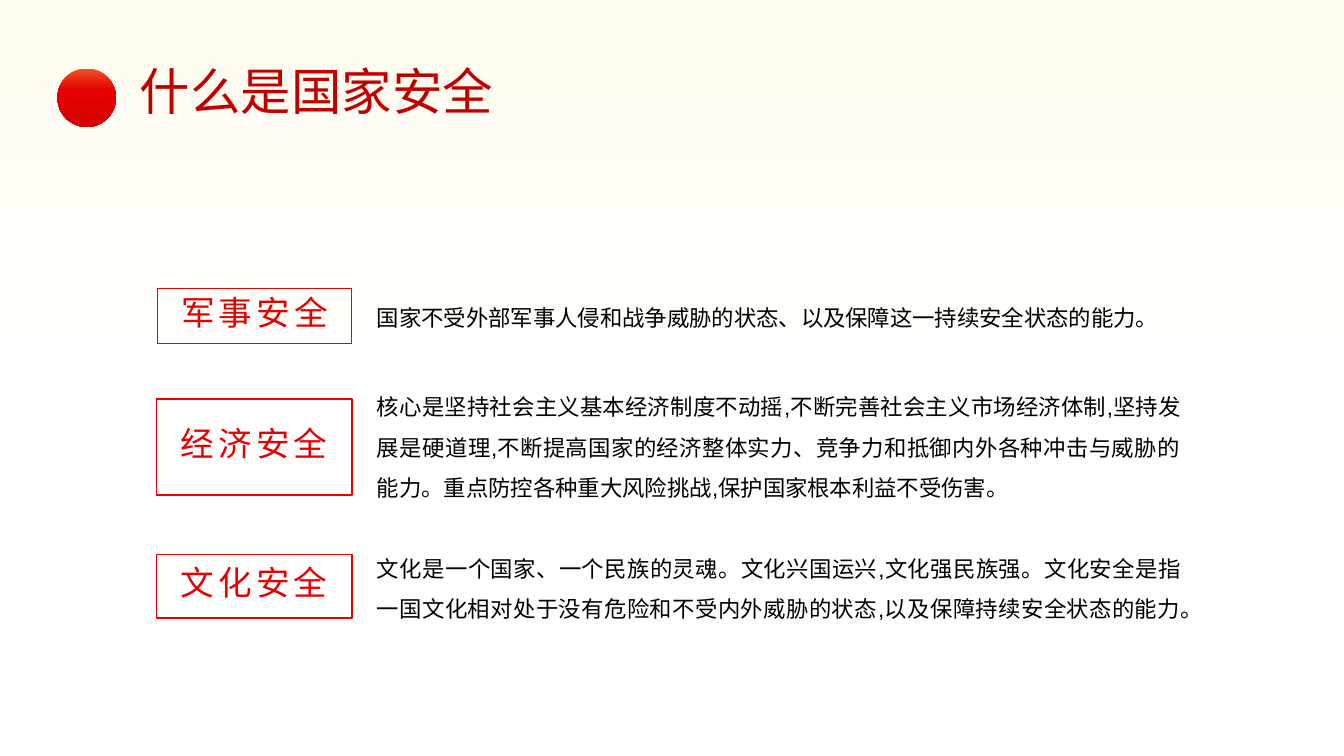
import pptx
import pptx.dml.color
import pptx.enum.shapes
import pptx.enum.text
import pptx.oxml
import pptx.oxml.ns
import pptx.util
from pptx.util import Inches

SHAPES = pptx.enum.shapes.MSO_SHAPE
ALIGN = pptx.enum.text.PP_ALIGN
ANCHOR = pptx.enum.text.MSO_ANCHOR
CJK_FONT = "Noto Sans CJK SC"
RED = "E60000"

TOPICS = [
    ("军事安全", (1.56, 2.86, 1.93, 0.55), (3.64, 2.7, 8.32, 0.64), 2,
     "国家不受外部军事人侵和战争威胁的状态、以及保障这一持续安全状态的能力。"),
    ("经济安全", (1.55, 3.96, 1.94, 0.95), (3.64, 3.72, 8.17, 1.31), 1.5,
     "核心是坚持社会主义基本经济制度不动摇,不断完善社会主义市场经济体制,坚持"
     "发展是硬道理,不断提高国家的经济整体实力、竞争力和抵御内外各种冲击与威胁"
     "的能力。重点防控各种重大风险挑战,保护国家根本利益不受伤害。"),
    ("文化安全", (1.55, 5.5, 1.94, 0.63), (3.64, 5.32, 8.17, 0.91), 1.5,
     "文化是一个国家、一个民族的灵魂。文化兴国运兴,文化强民族强。文化安全是指"
     "一国文化相对处于没有危险和不受内外威胁的状态,以及保障持续安全状态的能力。"),
]


def color(hex_value):
    """Turn a hex string into a colour."""
    return pptx.dml.color.RGBColor.from_string(hex_value)


def add_plain_shape(slide, kind, box):
    """Add a preset shape without shadow or line."""
    shape = slide.shapes.add_shape(kind, *map(Inches, box))
    shape.shadow.inherit = False
    shape.line.fill.background()
    return shape


def fill_downward(shape, stops):
    """Fill a shape with a top-to-bottom gradient of (percent, hex) stops."""
    shape.fill.gradient()
    gradient = shape.fill._fill._gradFill
    for child in list(gradient):
        gradient.remove(child)
    marks = "".join(
        f'<a:gs pos="{percent * 1000}"><a:srgbClr val="{hex_value}"/></a:gs>'
        for percent, hex_value in stops)
    namespace = pptx.oxml.ns.nsdecls("a")
    gradient.append(pptx.oxml.parse_xml(f"<a:gsLst {namespace}>{marks}</a:gsLst>"))
    gradient.append(pptx.oxml.parse_xml(f'<a:lin {namespace} ang="5400000" scaled="0"/>'))


def write(shape, text, size, hex_value, align, latin=CJK_FONT, spacing=0, leading=1):
    """Write one styled paragraph into a shape."""
    shape.text_frame.word_wrap = True
    paragraph = shape.text_frame.paragraphs[0]
    paragraph.text = text
    paragraph.alignment = align
    paragraph.line_spacing = float(leading)
    font = paragraph.font
    font.size = pptx.util.Pt(size)
    font.color.rgb = color(hex_value)
    font.name = latin
    properties = font._element
    if spacing:
        properties.set("spc", str(spacing * 100))
    namespace = pptx.oxml.ns.nsdecls("a")
    properties.append(pptx.oxml.parse_xml(f'<a:ea {namespace} typeface="{CJK_FONT}"/>'))


def add_backdrop(slide, box):
    """Cover the box with a cream-to-white gradient."""
    backdrop = add_plain_shape(slide, SHAPES.RECTANGLE, box)
    fill_downward(backdrop, [(0, "FEFBEF"), (57, "FFFFFF"), (100, "FFFFFF")])


def add_heading(slide, box, text):
    """Place a red ball and the slide title in the box."""
    left, top, width, height = box
    ball = add_plain_shape(slide, SHAPES.OVAL, (left, top + 0.13, 0.58, 0.58))
    fill_downward(ball, [(0, "F05327"), (36, RED), (100, "D60000")])
    title = slide.shapes.add_textbox(
        *map(Inches, (left + 0.72, top, width - 0.72, height)))
    write(title, text, 36, "C00000", ALIGN.JUSTIFY)


def add_topic(slide, label_box, body_box, label, body, leading):
    """Place a framed label beside its explanation."""
    frame = add_plain_shape(slide, SHAPES.RECTANGLE, label_box)
    frame.fill.background()
    frame.line.color.rgb = color(RED)
    frame.line.width = pptx.util.Pt(1)
    frame.text_frame.vertical_anchor = ANCHOR.MIDDLE
    frame.text_frame.margin_bottom = Inches(0.12)
    write(frame, label, 24, RED, ALIGN.CENTER, spacing=3)
    explanation = slide.shapes.add_textbox(*map(Inches, body_box))
    write(explanation, body, 16, "000000", ALIGN.JUSTIFY, latin="Arial", leading=leading)


def main():
    """Build and save the slide."""
    deck = pptx.Presentation()
    deck.slide_width, deck.slide_height = Inches(13.33), Inches(7.5)
    slide = deck.slides.add_slide(deck.slide_layouts[6])
    add_backdrop(slide, (0, 0, 13.33, 7.5))
    add_heading(slide, (0.57, 0.55, 4.76, 0.71), "什么是国家安全")
    for label, label_box, body_box, leading, body in TOPICS:
        add_topic(slide, label_box, body_box, label, body, leading)
    deck.save("out.pptx")


if __name__ == "__main__":
    main()
